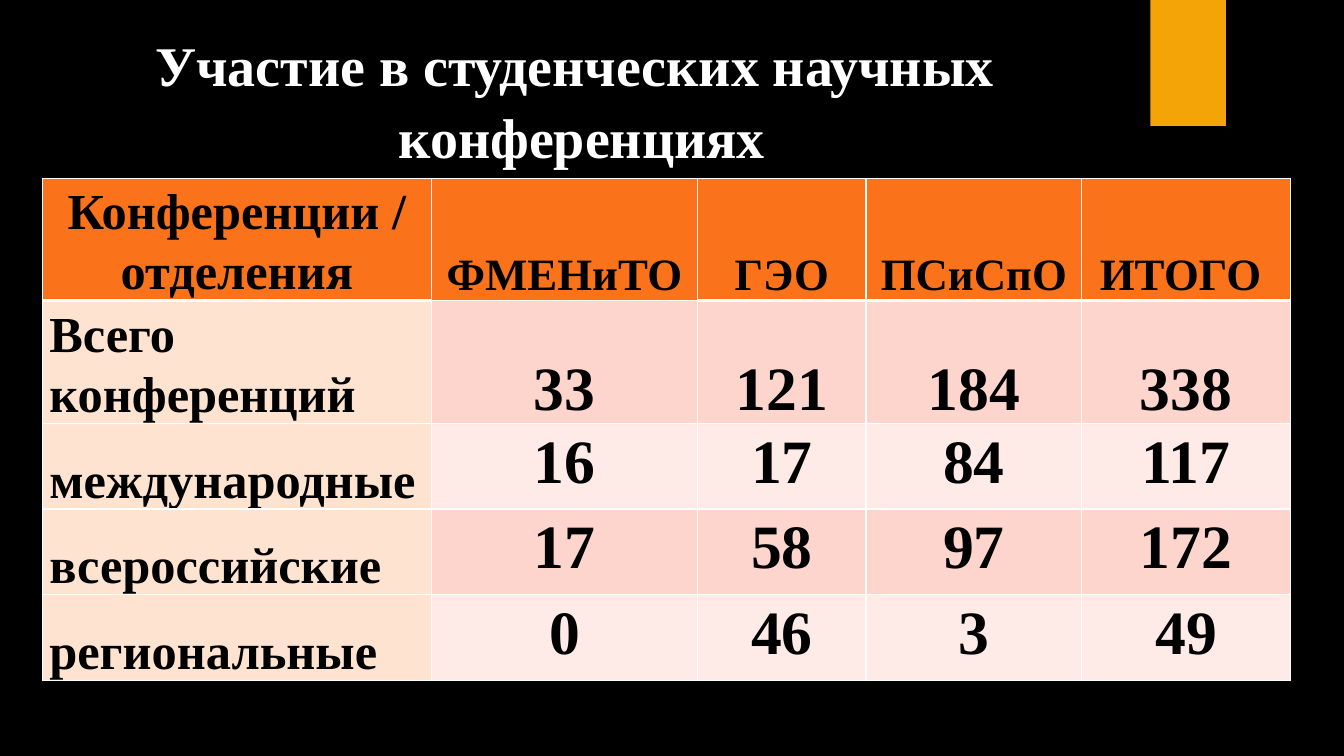
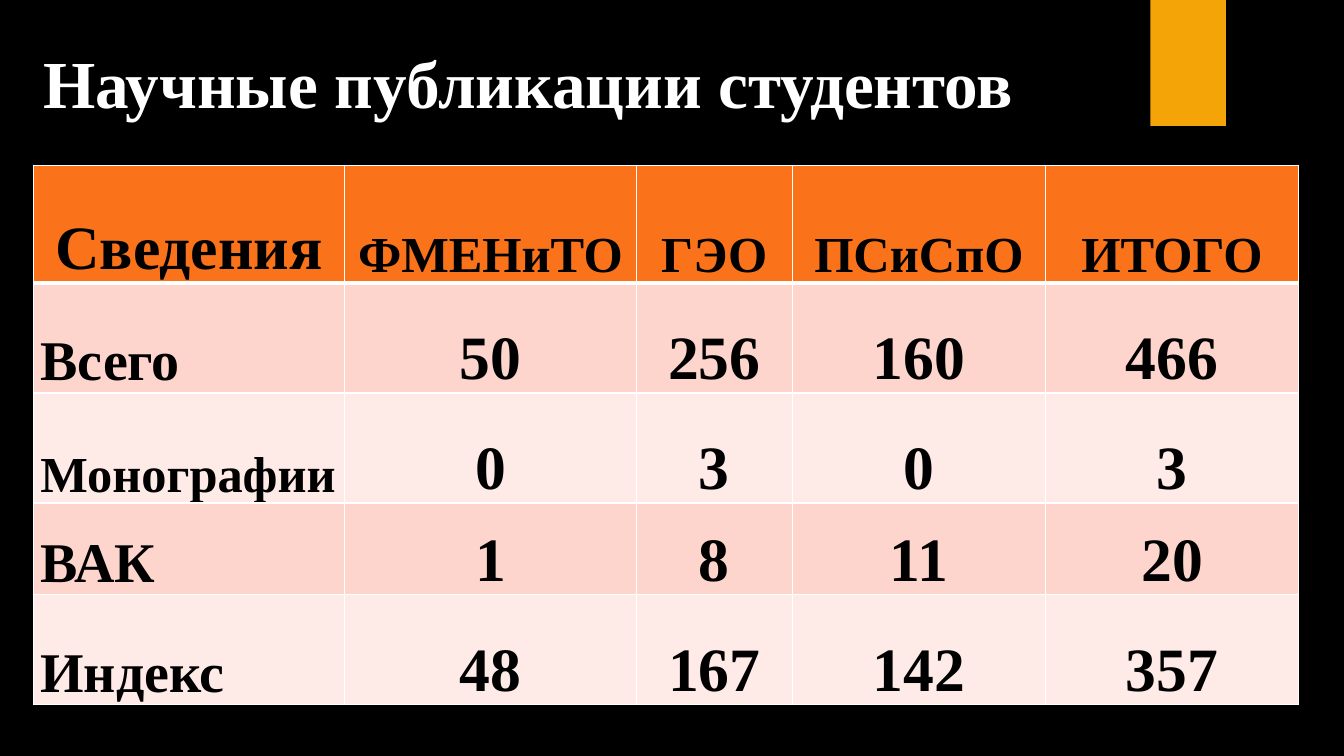
from lxml.etree import SubElement
from pptx import Presentation
from pptx.dml.color import RGBColor
from pptx.enum.shapes import MSO_SHAPE
from pptx.enum.text import MSO_ANCHOR, MSO_AUTO_SIZE, PP_ALIGN
from pptx.oxml.ns import qn
from pptx.util import Inches, Pt

TITLE_ONLY = 5


def color(value):
    return RGBColor.from_string(value)


class ReportDeck:
    FONT = "Times New Roman"
    LINE_SPACING = 1.07
    BLACK, WHITE = "000000", "FFFFFF"
    ACCENT, HEADER, LABEL = "F5A408", "FA731A", "FEE3D1"
    BANDS = ("FDD5CD", "FEEBE8")
    NUMBER_SIZE = 44
    THIN, THICK = 1, 3

    def __init__(self):
        self.deck = Presentation()
        self.deck.slide_width, self.deck.slide_height = Inches(13.33), Inches(7.5)
        background = self.deck.slide_master.background.fill
        background.solid()
        background.fore_color.rgb = color(self.BLACK)
        self.page = None

    def add_page(self):
        self.page = self.deck.slides.add_slide(self.deck.slide_layouts[TITLE_ONLY])
        bar = self.page.shapes.add_shape(
            MSO_SHAPE.RECTANGLE, Inches(11.41), 0, Inches(0.75), Inches(1.25))
        bar.shadow.inherit = False
        bar.fill.solid()
        bar.fill.fore_color.rgb = color(self.ACCENT)
        bar.line.fill.background()

    def add_span(self, para, text, size, tint):
        span = para.add_run()
        span.text = text
        span.font.name, span.font.size, span.font.bold = self.FONT, Pt(size), True
        span.font.color.rgb = color(tint)

    def add_title(self, lines, left, top, width, height, size, align):
        title = self.page.shapes.title
        title.left, title.top = Inches(left), Inches(top)
        title.width, title.height = Inches(width), Inches(height)
        frame = title.text_frame
        frame.word_wrap = True
        frame.auto_size = MSO_AUTO_SIZE.NONE
        frame.vertical_anchor = MSO_ANCHOR.TOP
        para = frame.paragraphs[0]
        para.alignment, para.line_spacing = align, self.LINE_SPACING
        for number, line in enumerate(lines):
            if number:
                para.add_line_break()
            self.add_span(para, line, size, self.WHITE)

    def set_borders(self, cell, top, bottom):
        """Draw white borders, which must precede the fill in the cell properties."""
        properties = cell._tc.get_or_add_tcPr()
        widths = {"a:lnL": self.THIN, "a:lnR": self.THIN, "a:lnT": top, "a:lnB": bottom}
        for position, (tag, width) in enumerate(widths.items()):
            line = SubElement(properties, qn(tag), w=str(Pt(width)))
            fill = SubElement(line, qn("a:solidFill"))
            SubElement(fill, qn("a:srgbClr"), val=self.WHITE)
            properties.insert(position, line)

    def fill_cell(self, cell, text, size, tint, align, anchor):
        cell.margin_left = cell.margin_right = Inches(0.07)
        cell.margin_top = cell.margin_bottom = 0
        cell.vertical_anchor = anchor
        cell.fill.solid()
        cell.fill.fore_color.rgb = color(tint)
        frame = cell.text_frame
        for number, line in enumerate(text.split("\n")):
            para = frame.add_paragraph() if number else frame.paragraphs[0]
            para.alignment, para.line_spacing = align, self.LINE_SPACING
            self.add_span(para, line, size, self.BLACK)

    def add_table(self, left, top, widths, heights, header, header_sizes, rows,
                  label_tint=None, top_rows=(), thin_rule_columns=()):
        """Each row is (label, label size, numbers); top_rows hold top-anchored numbers."""
        table = self.page.shapes.add_table(
            len(heights), len(widths), Inches(left), Inches(top),
            Inches(sum(widths)), Inches(sum(heights))).table
        for column, width in zip(table.columns, widths):
            column.width = Inches(width)
        for row, height in zip(table.rows, heights):
            row.height = Inches(height)

        for column, (text, size) in enumerate(zip(header, header_sizes)):
            self.fill_cell(table.cell(0, column), text, size, self.HEADER,
                           PP_ALIGN.CENTER, MSO_ANCHOR.BOTTOM)
        for index, (label, label_size, numbers) in enumerate(rows, 1):
            band = self.BANDS[(index - 1) % 2]
            self.fill_cell(table.cell(index, 0), label, label_size, label_tint or band,
                           PP_ALIGN.LEFT, MSO_ANCHOR.BOTTOM)
            anchor = MSO_ANCHOR.TOP if index in top_rows else MSO_ANCHOR.BOTTOM
            for column, number in enumerate(numbers, 1):
                self.fill_cell(table.cell(index, column), str(number), self.NUMBER_SIZE,
                               band, PP_ALIGN.CENTER, anchor)

        for column in range(len(widths)):
            rule = self.THIN if column in thin_rule_columns else self.THICK
            for index in range(len(heights)):
                self.set_borders(table.cell(index, column),
                                 rule if index == 1 else self.THIN,
                                 rule if index == 0 else self.THIN)


def main():
    report = ReportDeck()

    report.add_page()
    report.add_title(["Участие в студенческих научных ", "конференциях"],
                     0.17, 0.21, 11.2, 1.33, 40, PP_ALIGN.CENTER)
    report.add_table(
        0.42, 1.77, [3.86, 2.64, 1.67, 2.14, 2.07], [1.21, 1.22, 0.85, 0.85, 0.85],
        ["Конференции /\nотделения", "ФМЕНиТО", "ГЭО", "ПСиСпО", "ИТОГО "],
        [36, 32, 32, 32, 32],
        [("Всего конференций", 36, [33, 121, 184, 338]),
         ("международные", 36, [16, 17, 84, 117]),
         ("всероссийские", 36, [17, 58, 97, 172]),
         ("региональные", 36, [0, 46, 3, 49])],
        label_tint=report.LABEL, top_rows=(2, 3, 4), thin_rule_columns=(1,))

    report.add_page()
    report.add_title(["Научные публикации студентов"],
                     0.33, 0.3, 10.29, 0.93, 48, PP_ALIGN.LEFT)
    report.add_table(
        0.33, 1.64, [3.09, 2.89, 1.55, 2.51, 2.51], [1.17, 1.09, 1.09, 0.91, 1.09],
        ["Сведения", "ФМЕНиТО", "ГЭО", "ПСиСпО", "ИТОГО"],
        [44, 36, 36, 36, 36],
        [("Всего", 40, [50, 256, 160, 466]),
         ("Монографии", 36, [0, 3, 0, 3]),
         ("ВАК", 40, [1, 8, 11, 20]),
         ("Индекс", 40, [48, 167, 142, 357])])

    report.deck.save("out.pptx")


if __name__ == "__main__":
    main()
